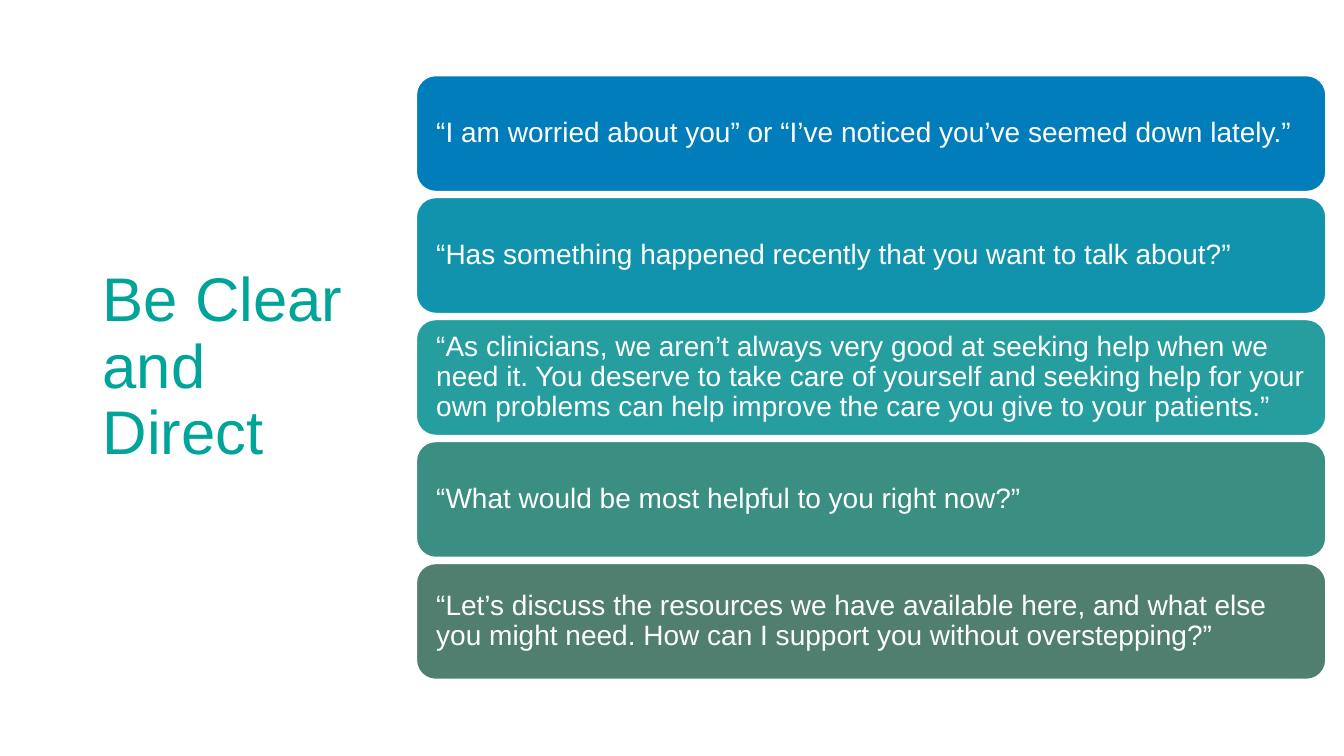
from dataclasses import dataclass

from pptx import Presentation
from pptx.dml.color import RGBColor
from pptx.enum.shapes import MSO_SHAPE
from pptx.enum.text import MSO_ANCHOR, PP_ALIGN
from pptx.slide import Slide
from pptx.text.text import TextFrame
from pptx.util import Inches, Pt

ROUNDED_RECTANGLE = MSO_SHAPE.ROUNDED_RECTANGLE
MIDDLE = MSO_ANCHOR.MIDDLE
LEFT = PP_ALIGN.LEFT

FONT = "Arial"
WHITE = "FFFFFF"
TEAL = "00A499"

CARD_LEFT = 4.13
CARD_TOP = 0.75
CARD_WIDTH = 9.02
CARD_HEIGHT = 1.15
CARD_PITCH = 1.21


@dataclass(frozen=True)
class Card:
    quote: str
    fill: str


CARDS = [
    Card("“I am worried about you” or “I’ve noticed you’ve seemed down lately.”", "007DBA"),
    Card("“Has something happened recently that you want to talk about?”", "1293AD"),
    Card(
        "“As clinicians, we aren’t always very good at seeking help when we need it. "
        "You deserve to take care of yourself and seeking help for your own problems "
        "can help improve the care you give to your patients.”",
        "269E9F",
    ),
    Card("“What would be most helpful to you right now?”", "3A8F82"),
    Card(
        "“Let’s discuss the resources we have available here, and what else you might "
        "need. How can I support you without overstepping?”",
        "507F70",
    ),
]


def color(value: str) -> RGBColor:
    return RGBColor.from_string(value)


def write_text(frame: TextFrame, text: str, size: int, font_color: str,
               side_margin: float, edge_margin: float) -> None:
    frame.word_wrap = True
    frame.vertical_anchor = MIDDLE
    frame.margin_left = frame.margin_right = Inches(side_margin)
    frame.margin_top = frame.margin_bottom = Inches(edge_margin)
    paragraph = frame.paragraphs[0]
    paragraph.text = text
    paragraph.alignment = LEFT
    paragraph.line_spacing = 0.9
    paragraph.font.name = FONT
    paragraph.font.size = Pt(size)
    paragraph.font.color.rgb = color(font_color)


def add_title(slide: Slide, text: str) -> None:
    title = slide.shapes.add_textbox(Inches(0.92), Inches(0.61), Inches(2.72), Inches(6.09))
    write_text(title.text_frame, text, 44, TEAL, 0.1, 0.05)


def add_card(slide: Slide, card: Card, top: float) -> None:
    shape = slide.shapes.add_shape(
        ROUNDED_RECTANGLE, Inches(CARD_LEFT), Inches(top), Inches(CARD_WIDTH), Inches(CARD_HEIGHT)
    )
    shape.shadow.inherit = False
    shape.fill.solid()
    shape.fill.fore_color.rgb = color(card.fill)
    shape.line.color.rgb = color(WHITE)
    shape.line.width = Pt(1)
    write_text(shape.text_frame, card.quote, 20, WHITE, 0.14, 0.08)


def main() -> None:
    presentation = Presentation()
    presentation.slide_width = Inches(13.33)
    presentation.slide_height = Inches(7.5)
    slide = presentation.slides.add_slide(presentation.slide_layouts[6])
    add_title(slide, "Be Clear and Direct")
    for index, card in enumerate(CARDS):
        add_card(slide, card, CARD_TOP + index * CARD_PITCH)
    presentation.save("out.pptx")


if __name__ == "__main__":
    main()
